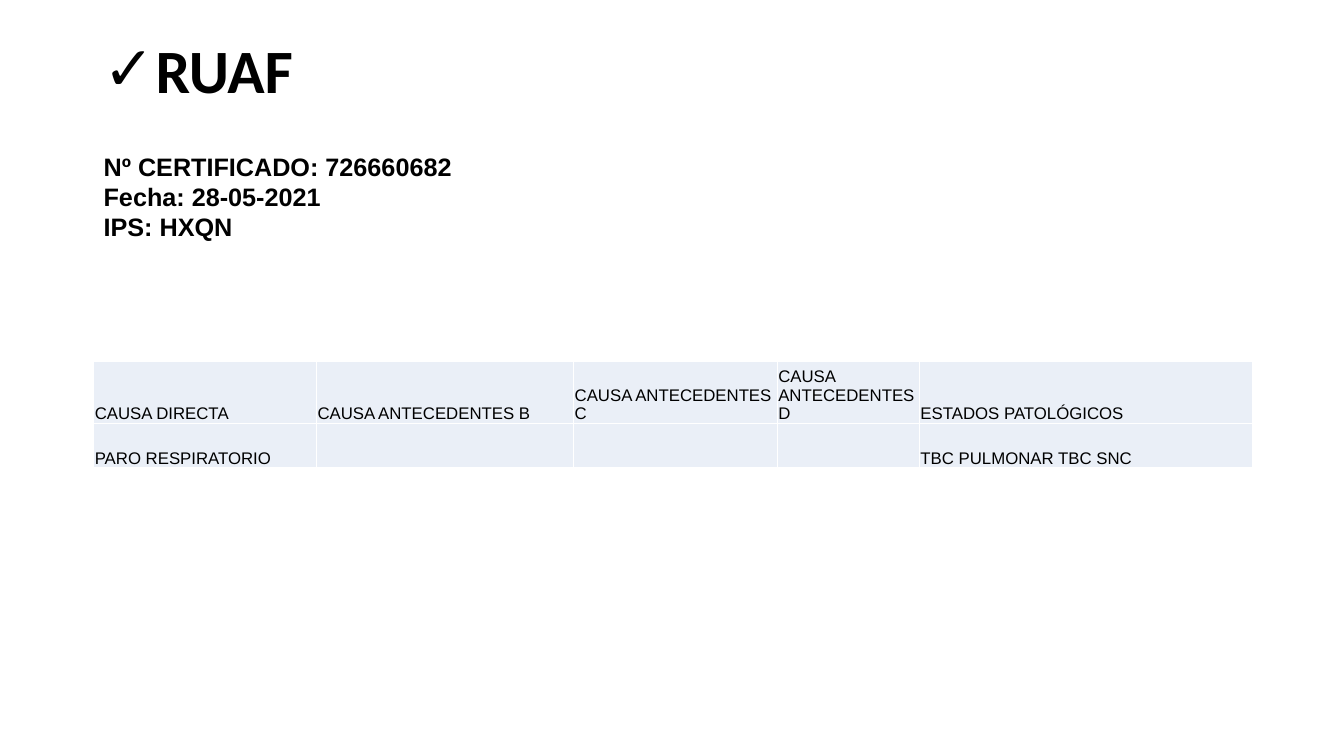
from dataclasses import dataclass

from lxml import etree
from pptx import Presentation
from pptx.dml.color import RGBColor
from pptx.enum.text import MSO_ANCHOR, MSO_AUTO_SIZE, PP_ALIGN
from pptx.oxml.ns import qn
from pptx.util import Inches, Pt

LEFT = PP_ALIGN.LEFT
MIDDLE = MSO_ANCHOR.MIDDLE
BOTTOM = MSO_ANCHOR.BOTTOM
NO_FIT = MSO_AUTO_SIZE.NONE
GROW = MSO_AUTO_SIZE.SHAPE_TO_FIT_TEXT
TITLE_ONLY = 5


@dataclass(frozen=True)
class Theme:
    text: RGBColor = RGBColor(0, 0, 0)
    cell: RGBColor = RGBColor(0xEA, 0xEF, 0xF7)
    border: str = "FFFFFF"
    title_font: str = "Calibri"
    body_font: str = "Arial"
    title_size: int = 44
    details_size: int = 18
    table_size: int = 12


@dataclass(frozen=True)
class Box:
    left: float
    top: float
    width: float
    height: float

    def lengths(self) -> tuple:
        return tuple(Inches(value) for value in (self.left, self.top, self.width, self.height))


@dataclass(frozen=True)
class Cause:
    heading: str
    value: str
    width: float


THEME = Theme()
TITLE_BOX = Box(0.93, 0, 11.5, 1.45)
DETAILS_BOX = Box(0.93, 1.45, 9.5, 1.01)
TABLE_BOX = Box(0.93, 3.59, 11.49, 1.05)
ROW_HEIGHTS = (0.6, 0.44)
DETAILS = ("Nº CERTIFICADO: 726660682", "Fecha: 28-05-2021", "IPS: HXQN")
CAUSES = (
    Cause("CAUSA DIRECTA", "PARO RESPIRATORIO", 2.21),
    Cause("CAUSA ANTECEDENTES B", "", 2.55),
    Cause("CAUSA ANTECEDENTES C", "", 2.02),
    Cause("CAUSA ANTECEDENTES D", "", 1.41),
    Cause("ESTADOS PATOLÓGICOS", "TBC PULMONAR TBC SNC", 3.3),
)


def add_run(paragraph, text: str, font: str, size: int, bold: bool) -> None:
    paragraph.alignment = LEFT
    run = paragraph.add_run()
    run.text = text
    run.font.name = font
    run.font.size = Pt(size)
    run.font.bold = bold
    run.font.color.rgb = THEME.text


def add_check_bullet(paragraph) -> None:
    properties = paragraph._p.get_or_add_pPr()
    properties.set("marL", str(Inches(0.31)))
    properties.set("indent", str(Inches(-0.31)))
    etree.SubElement(properties, qn("a:buFont"), typeface=THEME.body_font)
    etree.SubElement(properties, qn("a:buChar"), char="✓")


def format_title(slide) -> None:
    title = slide.shapes.title
    title.left, title.top, title.width, title.height = TITLE_BOX.lengths()
    frame = title.text_frame
    frame.auto_size = NO_FIT
    frame.vertical_anchor = MIDDLE
    paragraph = frame.paragraphs[0]
    paragraph.line_spacing = 0.9
    add_run(paragraph, "RUAF", THEME.title_font, THEME.title_size, True)
    add_check_bullet(paragraph)


def add_details(slide) -> None:
    frame = slide.shapes.add_textbox(*DETAILS_BOX.lengths()).text_frame
    frame.word_wrap = True
    frame.auto_size = GROW
    for index, line in enumerate(DETAILS):
        paragraph = frame.add_paragraph() if index else frame.paragraphs[0]
        add_run(paragraph, line, THEME.body_font, THEME.details_size, True)


def add_borders(cell) -> None:
    properties = cell._tc.get_or_add_tcPr()
    for index, side in enumerate(("a:lnL", "a:lnR", "a:lnT", "a:lnB")):
        line = etree.Element(qn(side), w=str(Pt(1)))
        fill = etree.SubElement(line, qn("a:solidFill"))
        etree.SubElement(fill, qn("a:srgbClr"), val=THEME.border)
        properties.insert(index, line)


def format_cell(cell, text: str) -> None:
    cell.fill.solid()
    cell.fill.fore_color.rgb = THEME.cell
    cell.vertical_anchor = BOTTOM
    cell.margin_left = cell.margin_right = cell.margin_top = Inches(0.01)
    cell.margin_bottom = Inches(0)
    add_borders(cell)
    if text:
        add_run(cell.text_frame.paragraphs[0], text, THEME.body_font, THEME.table_size, False)


def add_causes(slide) -> None:
    table = slide.shapes.add_table(len(ROW_HEIGHTS), len(CAUSES), *TABLE_BOX.lengths()).table
    table.first_row = False
    table.horz_banding = False
    for row, height in zip(table.rows, ROW_HEIGHTS):
        row.height = Inches(height)
    for column, cause in enumerate(CAUSES):
        table.columns[column].width = Inches(cause.width)
        for row, text in enumerate((cause.heading, cause.value)):
            format_cell(table.cell(row, column), text)


def main() -> None:
    presentation = Presentation()
    presentation.slide_width = Inches(13.33)
    presentation.slide_height = Inches(7.5)
    slide = presentation.slides.add_slide(presentation.slide_layouts[TITLE_ONLY])
    format_title(slide)
    add_details(slide)
    add_causes(slide)
    presentation.save("out.pptx")


if __name__ == "__main__":
    main()
